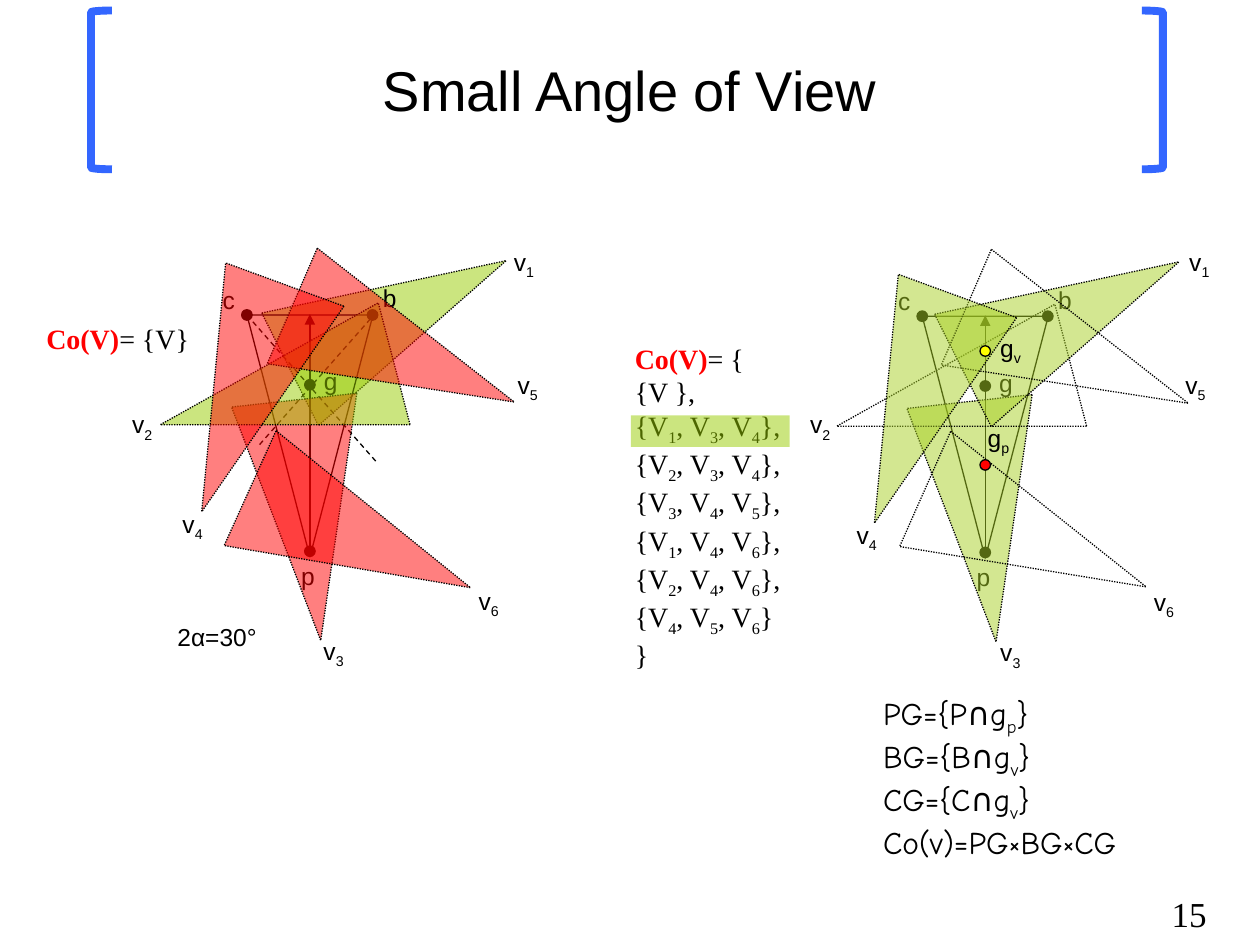
from lxml import etree
from pptx import Presentation
from pptx.dml.color import RGBColor
from pptx.enum.dml import MSO_LINE
from pptx.enum.shapes import MSO_CONNECTOR, MSO_SHAPE
from pptx.enum.text import MSO_ANCHOR, MSO_AUTO_SIZE, PP_ALIGN
from pptx.oxml.ns import qn
from pptx.util import Pt

DOTTED, DASHED = MSO_LINE.ROUND_DOT, MSO_LINE.DASH
STRAIGHT = MSO_CONNECTOR.STRAIGHT
TRIANGLE, OVAL, RECT = MSO_SHAPE.ISOSCELES_TRIANGLE, MSO_SHAPE.OVAL, MSO_SHAPE.RECTANGLE
BRACKETS = (MSO_SHAPE.LEFT_BRACKET, MSO_SHAPE.RIGHT_BRACKET)
MIDDLE, CENTER = MSO_ANCHOR.MIDDLE, PP_ALIGN.CENTER
GROW = MSO_AUTO_SIZE.SHAPE_TO_FIT_TEXT

COLORS = {"black": "000000", "white": "FFFFFF", "blue": "3366FF", "red": "FF0000",
          "yellow": "FFFF00", "green": "99CC00", "lime": "A8D025"}
SANS, SERIF, COMIC = "Arial", "Times New Roman", "Comic Neue"
CONE_W, CONE_H = 72, 138.2
DOT = 6


def rgb(name):
    return RGBColor.from_string(COLORS[name])


class Board:
    def __init__(self, slide):
        self.slide = slide
        self.shapes = slide.shapes

    def start_group(self):
        self.shapes = self.slide.shapes.add_group_shape().shapes

    def end_group(self):
        self.shapes = self.slide.shapes

    def title(self, text, x, y, w, h):
        sp = self.slide.shapes.title
        sp.left, sp.top, sp.width, sp.height = Pt(x), Pt(y), Pt(w), Pt(h)
        tf = sp.text_frame
        tf.text = text
        tf.vertical_anchor = MIDDLE
        p = tf.paragraphs[0]
        p.alignment = CENTER
        self.font(p, 32, SANS)

    def font(self, p, size, name):
        p.font.size, p.font.name = Pt(size), name
        p.font.color.rgb = rgb("black")

    def shape(self, kind, x, y, w, h, fill=None, line="black", weight=0.75,
              dash=None, rot=0, alpha=None):
        sp = self.shapes.add_shape(kind, Pt(x), Pt(y), Pt(w), Pt(h))
        sp.shadow.inherit = False
        sp.rotation = rot
        if fill:
            sp.fill.solid()
            sp.fill.fore_color.rgb = rgb(fill)
            if alpha:
                color = sp._element.spPr.find(qn("a:solidFill"))[0]
                etree.SubElement(color, qn("a:alpha"), val=str(alpha * 1000))
        else:
            sp.fill.background()
        if line:
            self.stroke(sp.line, line, weight, dash)
        else:
            sp.line.fill.background()

    def stroke(self, line, color, weight, dash):
        line.color.rgb = rgb(color)
        line.width = Pt(weight)
        if dash:
            line.dash_style = dash

    def line(self, x1, y1, x2, y2, dash=None, arrow=False):
        c = self.shapes.add_connector(STRAIGHT, Pt(x1), Pt(y1), Pt(x2), Pt(y2))
        self.stroke(c.line, "black", 0.75, dash)
        spPr = c._element.spPr
        if arrow:
            etree.SubElement(spPr.find(qn("a:ln")), qn("a:headEnd"), type="triangle")
        etree.SubElement(spPr, qn("a:effectLst"))

    def dot(self, cx, cy, fill="black"):
        self.shape(OVAL, cx - DOT / 2, cy - DOT / 2, DOT, DOT, fill)

    def cone(self, x, y, rot, fill):
        self.shape(TRIANGLE, x, y, CONE_W, CONE_H, fill, dash=DOTTED, rot=rot, alpha=50)

    def text(self, lines, x, y, w, h, size=14, font=SANS, wrap=False, lead=None):
        """Each "_" lowers the next character; lead is a bold red opening."""
        tf = self.shapes.add_textbox(Pt(x), Pt(y), Pt(w), Pt(h)).text_frame
        tf.word_wrap = wrap
        tf.auto_size = GROW
        for i, content in enumerate(lines):
            p = tf.add_paragraph() if i else tf.paragraphs[0]
            self.font(p, size, font)
            if lead and i == 0:
                r = p.add_run()
                r.text = lead
                r.font.bold = True
                r.font.color.rgb = rgb("red")
            plain, *lowered = content.split("_")
            p.add_run().text = plain
            for piece in lowered:
                r = p.add_run()
                r.text = piece[0]
                r._r.get_or_add_rPr().set("baseline", "-25000")
                if piece[1:]:
                    p.add_run().text = piece[1:]

    def label(self, text, x, y):
        self.text([text], x, y, 26.6 if "_" in text else 22.3, 23.8)

    def frame(self, dx, dy):
        """Triangle c-b-p with its centre g and the axis through it."""
        for x, y in ((177.1, 219.9), (177.1, 315), (212.9, 180), (141.1, 180)):
            self.dot(x + dx, y + dy)
        self.shape(TRIANGLE, 141.1 + dx, 180 + dy, CONE_W, CONE_H, rot=180)
        for name, x, y in (("g", 178, 205.9), ("p", 165, 316.8),
                           ("b", 211.7, 158.4), ("c", 120.2, 159.1)):
            self.label(name, x + dx, y + dy)
        self.line(177.1 + dx, 179.5 + dy, 177.1 + dx, 315.4 + dy, arrow=True)


# Cones: label, left, top, rotation, fill, label left, label top
LEFT_BACK = ("v_1", 191.5, 110.9, 63.3, "green", 286.6, 137.5)
LEFT_CONES = [
    ("v_3", 139.7, 228.2, 173.7, "red", 177.8, 360),
    ("v_2", 122.4, 156.2, 255.4, "green", 68.4, 230.4),
    ("v_6", 169.9, 238.3, 114.3, "red", 266.4, 331.2),
    ("v_5", 194.4, 133.2, 113.4, "red", 288.7, 208.1),
    ("v_4", 103, 158.4, 200.1, "red", 97.2, 287.3),
]
RIGHT_CONES = [
    ("v_3", 525.6, 229, 173.7, "lime", 564.5, 360.7),
    ("v_2", 509, 157, 255.4, None, 455.8, 230.4),
    ("v_1", 576, 111.6, 63.3, "lime", 672.5, 137.5),
    ("v_6", 555.8, 238.3, 113.9, None, 652.3, 331.9),
    ("v_5", 579.6, 133.9, 113.4, None, 670.3, 208.1),
    ("v_4", 487.4, 164.9, 200.1, "lime", 482.4, 293.8),
]
TRIPLES = ["134", "234", "345", "146", "246", "456"]


def draw_cones(board, cones):
    for name, x, y, rot, fill, label_x, label_y in cones:
        board.cone(x, y, rot, fill)
        board.label(name, label_x, label_y)


def main():
    prs = Presentation()
    prs.slide_width, prs.slide_height = Pt(720), Pt(540)
    board = Board(prs.slides.add_slide(prs.slide_layouts[5]))

    # Title, brackets and page number
    for kind, x in zip(BRACKETS, (52, 652.5)):
        board.shape(kind, x, 6, 12, 90.75, "white", "blue", 4.5)
    board.title("Small Angle of View", 54, 6, 612, 90)
    board.text(["15"], 662.4, 506.2, 38.2, 31, 20, SERIF)

    # Left view: all cones
    board.start_group()
    draw_cones(board, [LEFT_BACK])
    board.frame(0, 0)
    board.line(211.7, 182.2, 147.6, 254.9, DASHED)
    board.line(141.1, 180, 216, 265, DASHED)
    draw_cones(board, LEFT_CONES)
    board.end_group()
    board.text(["2α=30°"], 94.3, 352.1, 60.5, 23.8)
    board.text(["= {V}"], 19.4, 180, 99.4, 26.6, 16, SERIF, True, "Co(V)")

    # Right view: one chosen subset
    board.start_group()
    board.frame(385.9, 0.7)
    draw_cones(board, RIGHT_CONES)
    board.dot(563, 265.7, "red")
    board.dot(563, 200.6, "yellow")
    board.label("g_v", 564.5, 186.5)
    board.label("g_p", 557.3, 238.3)
    board.end_group()

    # Subsets of V, with the chosen one highlighted
    subsets = ["{" + ", ".join(f"V_{n}" for n in triple) + "}" for triple in TRIPLES]
    rows = ["= {", "{V },", *",\n".join(subsets).split("\n"), "}"]
    board.text(rows, 355.7, 191.5, 112.3, 180.7, 16, SERIF, True, "Co(V)")
    board.text(["PG={P∩g_p}", "BG={B∩g_v}", "CG={C∩g_v}", "Co(v)=PG×BG×CG"],
               497.5, 393.1, 171.4, 93.6, 18, COMIC, True)
    board.shape(RECT, 360.5, 237.4, 90.7, 18, "green", None, alpha=50)

    prs.save("out.pptx")


if __name__ == "__main__":
    main()
